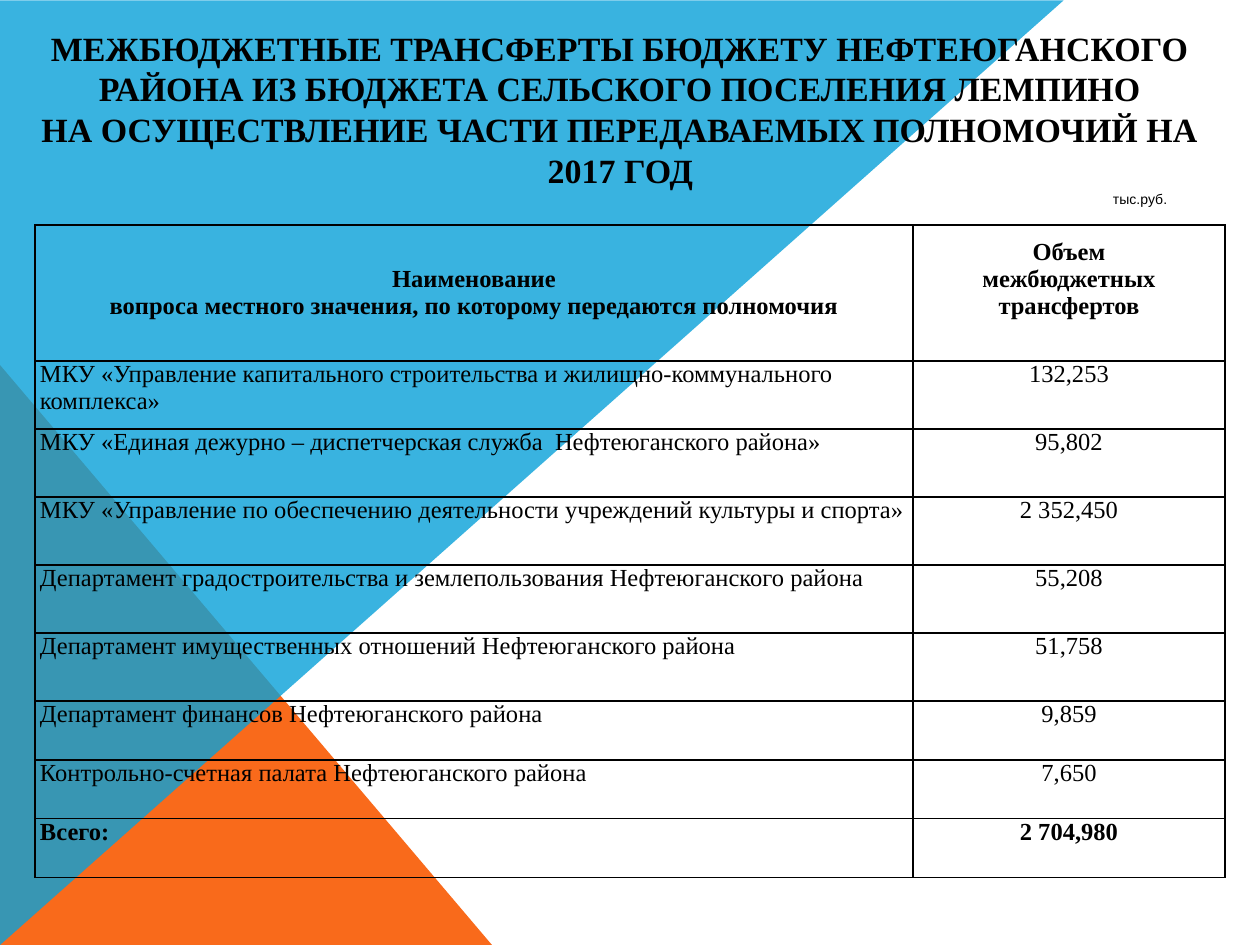
from dataclasses import dataclass

from lxml.etree import SubElement
from pptx import Presentation
from pptx.dml.color import RGBColor
from pptx.enum.shapes import MSO_SHAPE as Shape
from pptx.enum.text import MSO_ANCHOR as Anchor, PP_ALIGN as Align
from pptx.oxml.ns import qn
from pptx.util import Emu, Pt


@dataclass(frozen=True)
class Theme:
    ink: str = "000000"
    orange: str = "F96A1B"
    blue: str = "08A1D9"
    serif: str = "Times New Roman"
    sans: str = "Arial"
    title: float = 19.4
    body: float = 14
    note: float = 8


def px(n):
    return Emu(round(n * 914400 / 126))


class Deck:
    """Draws styled elements on the current slide."""

    def __init__(self, theme):
        self.t = theme
        self.prs = Presentation()
        self.prs.slide_width, self.prs.slide_height = px(1260), px(945)
        self.s = self.prs.slides.add_slide(self.prs.slide_layouts[6])

    def triangle(self, x, y, w, h, color, rotation=0, alpha=100):
        sp = self.s.shapes.add_shape(Shape.RIGHT_TRIANGLE, px(x), px(y), px(w), px(h))
        sp.shadow.inherit = False
        sp.rotation = rotation
        sp.line.fill.background()
        sp.fill.solid()
        sp.fill.fore_color.rgb = RGBColor.from_string(color)
        if alpha < 100:
            clr = sp.element.spPr.find(qn("a:solidFill")).find(qn("a:srgbClr"))
            SubElement(clr, qn("a:alpha"), val=str(alpha * 1000))

    def add_text(self, tf, paragraphs, size, font, bold=False, align=Align.LEFT):
        for i, text in enumerate(paragraphs):
            p = tf.add_paragraph() if i else tf.paragraphs[0]
            p.alignment = align
            for j, line in enumerate(text.split("\n")):
                if j:
                    p.add_line_break()
                r = p.add_run()
                r.text = line
                r.font.size, r.font.name, r.font.bold = Pt(size), font, bold
                r.font.color.rgb = RGBColor.from_string(self.t.ink)

    def text(self, x, y, w, h, text, size, font, anchor=Anchor.TOP, bottom=6, **style):
        tf = self.s.shapes.add_textbox(px(x), px(y), px(w), px(h)).text_frame
        tf.word_wrap = True
        tf.vertical_anchor = anchor
        tf.margin_left = tf.margin_right = px(13)
        tf.margin_top, tf.margin_bottom = px(6), px(bottom)
        self.add_text(tf, [text], size, font, **style)

    def borders(self, cell):
        pr = cell._tc.get_or_add_tcPr()
        for i, side in enumerate(("lnL", "lnR", "lnT", "lnB")):
            ln = pr.makeelement(qn("a:" + side), {"w": str(Pt(1))})
            fill = SubElement(ln, qn("a:solidFill"))
            SubElement(fill, qn("a:srgbClr"), val=self.t.ink)
            pr.insert(i, ln)

    def table(self, x, y, widths, heights, rows):
        tbl = self.s.shapes.add_table(len(rows), len(widths), px(x), px(y),
                                      px(sum(widths)), px(sum(heights))).table
        tbl.first_row = tbl.horz_banding = False
        for col, w in zip(tbl.columns, widths):
            col.width = px(w)
        for i, (row, h) in enumerate(zip(rows, heights)):
            tbl.rows[i].height = px(h)
            head = i == 0
            for j, text in enumerate(row):
                cell = tbl.cell(i, j)
                cell.fill.background()
                cell.margin_left = cell.margin_right = px(5)
                cell.margin_top = 0
                cell.margin_bottom = px(27 if head and j else 0)
                cell.vertical_anchor = Anchor.MIDDLE if head else Anchor.TOP
                self.add_text(cell.text_frame, text.split("\n"), self.t.body, self.t.serif,
                              bold=head or i == len(rows) - 1,
                              align=Align.CENTER if head or j else Align.LEFT)
                self.borders(cell)


TITLE = ("МЕЖБЮДЖЕТНЫЕ ТРАНСФЕРТЫ БЮДЖЕТУ НЕФТЕЮГАНСКОГО РАЙОНА ИЗ БЮДЖЕТА "
         "СЕЛЬСКОГО ПОСЕЛЕНИЯ ЛЕМПИНО\n"
         "НА ОСУЩЕСТВЛЕНИЕ ЧАСТИ ПЕРЕДАВАЕМЫХ ПОЛНОМОЧИЙ НА 2017 ГОД")
TRANSFERS = [
    ("Наименование\nвопроса местного значения, по которому передаются полномочия",
     "Объем\nмежбюджетных\nтрансфертов"),
    ("МКУ «Управление капитального строительства и жилищно-коммунального комплекса»",
     "132,253"),
    ("МКУ «Единая дежурно – диспетчерская служба  Нефтеюганского района»", "95,802"),
    ("МКУ «Управление по обеспечению деятельности учреждений культуры и спорта»",
     "2 352,450"),
    ("Департамент градостроительства и землепользования Нефтеюганского района", "55,208"),
    ("Департамент имущественных отношений Нефтеюганского района", "51,758"),
    ("Департамент финансов Нефтеюганского района", "9,859"),
    ("Контрольно-счетная палата Нефтеюганского района", "7,650"),
    ("Всего:", "2 704,980"),
]


def main():
    t = Theme()
    d = Deck(t)
    d.triangle(0, 365, 492, 580, t.orange)
    d.triangle(59, -59, 945, 1064, t.blue, rotation=90, alpha=80)
    d.text(15, 81, 1211, 109, TITLE, t.title, t.serif, Anchor.BOTTOM, 0,
           bold=True, align=Align.CENTER)
    d.table(35, 225, [878, 312], [136] + [68] * 5 + [59] * 3, TRANSFERS)
    d.text(1100, 185, 125, 30, "тыс.руб.", t.note, t.sans)
    d.prs.save("out.pptx")


if __name__ == "__main__":
    main()
